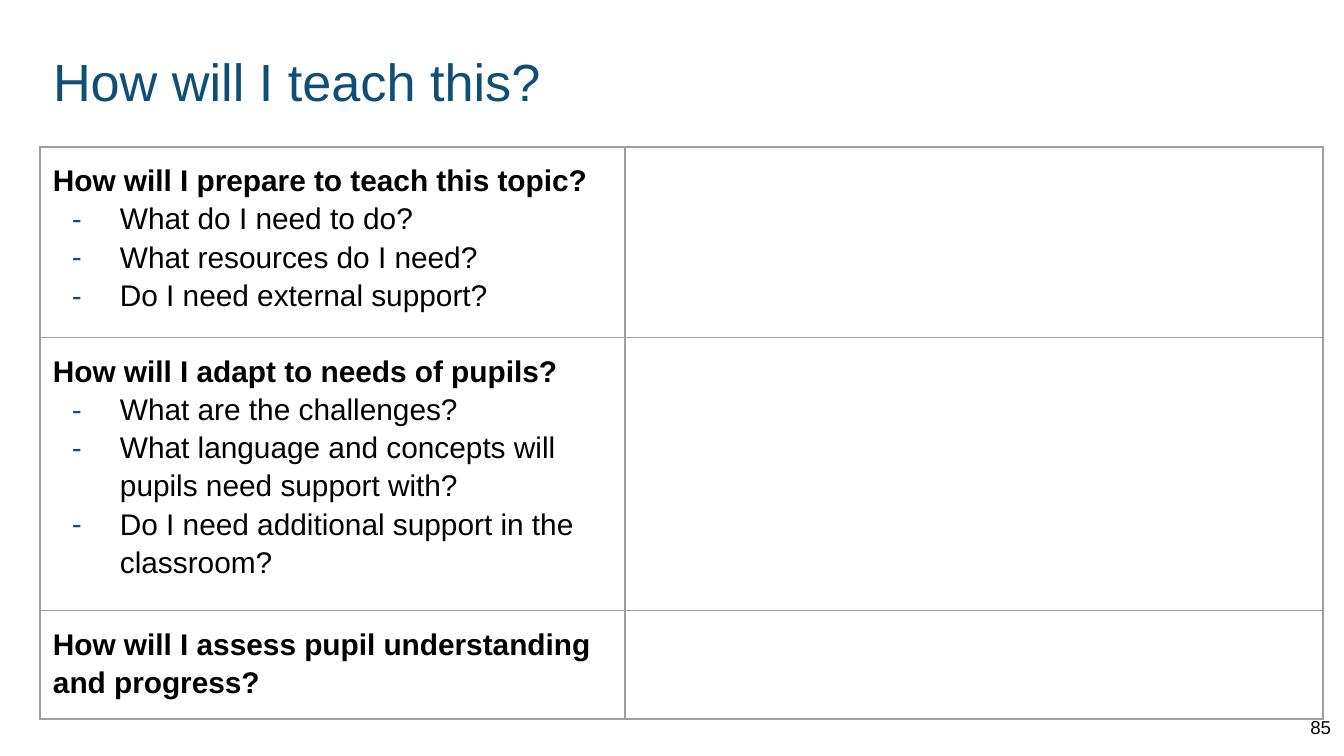
import pptx
import pptx.util
import pptx.dml.color
import pptx.enum.text
import pptx.oxml
import pptx.oxml.ns

# Content: heading and dashed points of each row
TITLE = "How will I teach this?"
PAGE = "85"
ROWS = [
    ("How will I prepare to teach this topic?",
     ["What do I need to do?",
      "What resources do I need?",
      "Do I need external support?"]),
    ("How will I adapt to needs of pupils?",
     ["What are the challenges?",
      "What language and concepts will pupils need support with?",
      "Do I need additional support in the classroom?"]),
    ("How will I assess pupil understanding and progress?", []),
]
COLS = [585, 698]
HEIGHTS = [187, 259, 103]
COLORS = {"title": "104F75", "text": "000000", "dash": "1F497D", "line": "9E9E9E"}
FONT = "Arial"
PAD = 13
ALIGN = pptx.enum.text.PP_ALIGN
ANCHOR = pptx.enum.text.MSO_ANCHOR


def px(n):
    return pptx.util.Emu(round(n * 914400 / 134.4))


def node(parent, tag, **attrs):
    item = pptx.oxml.ns.qn("a:" + tag)
    child = parent.makeelement(item, attrs)
    parent.append(child)
    return child


def write(para, text, size, color, bold=False):
    run = para.add_run()
    run.text = text
    run.font.name = FONT
    run.font.size = pptx.util.Pt(size)
    run.font.bold = bold
    run.font.color.rgb = pptx.dml.color.RGBColor.from_string(COLORS[color])


def pad(part):
    part.margin_left = part.margin_right = px(PAD)
    part.margin_top = part.margin_bottom = px(PAD)


def label(slide, box, text, size, color, align, anchor):
    frame = slide.shapes.add_textbox(*map(px, box)).text_frame
    frame.word_wrap = True
    frame.vertical_anchor = anchor
    pad(frame)
    frame.paragraphs[0].alignment = align
    write(frame.paragraphs[0], text, size, color)


def dash(para):
    props = para._p.get_or_add_pPr()
    props.set("marL", str(px(67)))
    props.set("indent", str(-px(48)))
    node(node(props, "buClr"), "srgbClr", val=COLORS["dash"])
    node(props, "buFont", typeface=FONT)
    node(props, "buChar", char="-")


def border(cell):
    props = cell._tc.get_or_add_tcPr()
    for side in ("lnL", "lnR", "lnT", "lnB"):
        line = node(props, side, w=str(pptx.util.Pt(0.75)))
        node(node(line, "solidFill"), "srgbClr", val=COLORS["line"])
    cell.fill.background()


deck = pptx.Presentation()
deck.slide_width, deck.slide_height = px(1344), px(756)
slide = deck.slides.add_slide(deck.slide_layouts[6])

# Title and page number
label(slide, (40, 36, 1140, 85), TITLE, 28, "title", ALIGN.LEFT, ANCHOR.TOP)
label(slide, (1263, 698, 81, 58), PAGE, 10, "text", ALIGN.RIGHT, ANCHOR.MIDDLE)

# Planning table
table = slide.shapes.add_table(len(ROWS), len(COLS), px(40), px(147),
                               px(sum(COLS)), px(sum(HEIGHTS))).table
table.first_row = table.horz_banding = False
for col, wide in zip(table.columns, COLS):
    col.width = px(wide)
for row, high, (head, points) in zip(table.rows, HEIGHTS, ROWS):
    row.height = px(high)
    for cell in row.cells:
        pad(cell)
        border(cell)
    frame = row.cells[0].text_frame
    for i, text in enumerate([head] + points):
        para = frame.add_paragraph() if i else frame.paragraphs[0]
        para.line_spacing = 1.15
        write(para, text, 16, "text", bold=i == 0)
        if i:
            dash(para)

deck.save("out.pptx")
